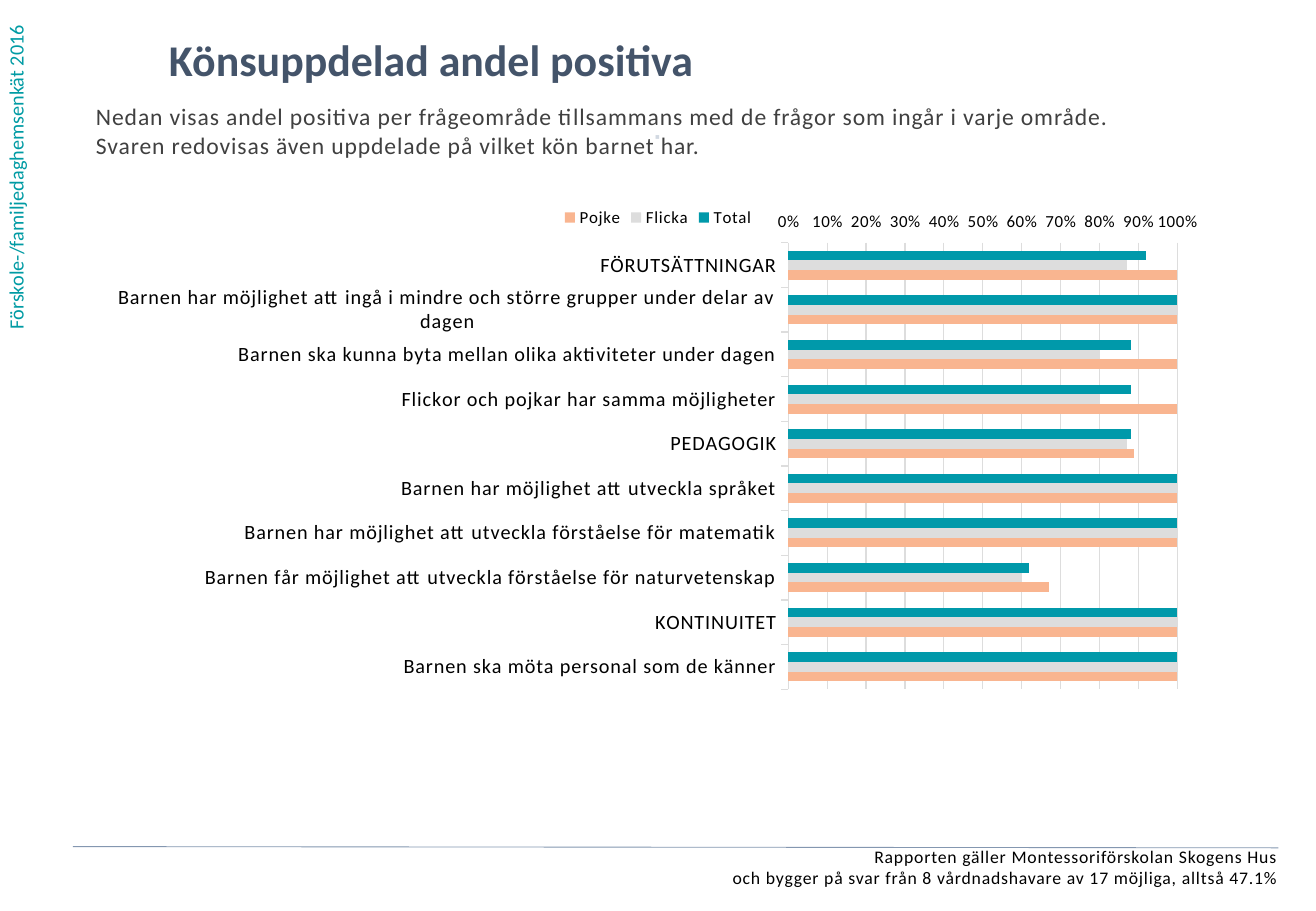
"""Build the slide with share of positive answers by gender."""
from lxml.etree import SubElement
from pptx import Presentation
from pptx.chart.data import CategoryChartData
from pptx.dml.color import RGBColor
from pptx.enum.chart import XL_AXIS_CROSSES, XL_CHART_TYPE, XL_LEGEND_POSITION, XL_TICK_MARK
from pptx.enum.shapes import MSO_CONNECTOR
from pptx.enum.text import PP_ALIGN
from pptx.oxml import parse_xml
from pptx.oxml.ns import nsdecls, qn
from pptx.util import Pt

PX = 9144
FONT = "Calibri"
COLORS = {
    "teal": "009BA4", "title": "44546A", "body": "404040", "black": "000000",
    "dot": "D2D9E2", "rule": "8497B0", "grid": "DDDDDD",
    "Total": "0099AA", "Flicka": "DDDDDD", "Pojke": "F9B590",
}


def style(font, size, color, bold=False):
    font.name, font.size, font.bold = FONT, Pt(size), bold
    font.color.rgb = RGBColor.from_string(COLORS[color])


def add_text(text, at, size, color, bold=False, align=PP_ALIGN.LEFT, spacing=0, inset=0, turn=None):
    box = page.shapes.add_textbox(*[value * PX for value in at])
    frame = box.text_frame
    frame.word_wrap = True
    if turn:
        frame._txBody.bodyPr.set("vert", turn)
    else:
        frame.margin_left = frame.margin_right = frame.margin_top = frame.margin_bottom = inset
    para = frame.paragraphs[0]
    para.alignment = align
    for number, line in enumerate(text.splitlines()):
        if number:
            para.add_line_break()
        span = para.add_run()
        span.text = line
        style(span.font, size, color, bold)
        span._r.get_or_add_rPr().set("spc", str(spacing))


deck = Presentation()
deck.slide_width, deck.slide_height = 1083 * PX, 750 * PX
page = deck.slides.add_slide(deck.slide_layouts[6])

add_text("Förskole-/familjedaghemsenkät 2016", (-2, 0, 40, 281), 12, "teal", turn="vert270")
add_text("Könsuppdelad andel positiva", (139, 27, 834, 57), 26, "title", bold=True)
add_text("""Nedan visas andel positiva per frågeområde tillsammans med de frågor som ingår i varje område.
Svaren redovisas även uppdelade på vilket kön barnet har.""", (79, 84, 946, 101), 14, "body", spacing=50)
add_text("""Rapporten gäller Montessoriförskolan Skogens Hus
och bygger på svar från 8 vårdnadshavare av 17 möjliga, alltså 47.1%""",
         (12, 696, 1040, 43), 10.5, "black", align=PP_ALIGN.RIGHT, spacing=50)
add_text("⋅", (387, 102, 308, 39), 12, "dot", bold=True, align=PP_ALIGN.CENTER, spacing=50)

data = CategoryChartData(number_format="0%")
data.categories = [
    "FÖRUTSÄTTNINGAR",
    "Barnen har möjlighet att ingå i mindre och större grupper under delar av dagen",
    "Barnen ska kunna byta mellan olika aktiviteter under dagen",
    "Flickor och pojkar har samma möjligheter",
    "PEDAGOGIK",
    "Barnen har möjlighet att utveckla språket",
    "Barnen har möjlighet att utveckla förståelse för matematik",
    "Barnen får möjlighet att utveckla förståelse för naturvetenskap",
    "KONTINUITET",
    "Barnen ska möta personal som de känner",
]
data.add_series("Total", (0.92, 1, 0.88, 0.88, 0.88, 1, 1, 0.62, 1, 1))
data.add_series("Flicka", (0.87, 1, 0.8, 0.8, 0.87, 1, 1, 0.6, 1, 1))
data.add_series("Pojke", (1, 1, 1, 1, 0.89, 1, 1, 0.67, 1, 1))
chart = page.shapes.add_chart(
    XL_CHART_TYPE.BAR_CLUSTERED, 79 * PX, 160 * PX, 925 * PX, 443 * PX, data).chart
style(chart.font, 10, "black")
chart.has_title = False
chart.has_legend = True
chart.legend.position = XL_LEGEND_POSITION.TOP
chart.legend.include_in_layout = False
style(chart.legend.font, 10, "black")

plot = chart.plots[0]
plot.gap_width, plot.overlap, plot.vary_by_categories = 162, 0, False
for series in plot.series:
    series.format.fill.solid()
    series.format.fill.fore_color.rgb = RGBColor.from_string(COLORS[series.name])

questions, shares = chart.category_axis, chart.value_axis
questions.reverse_order = True
questions.crosses = XL_AXIS_CROSSES.MAXIMUM
questions.major_tick_mark = XL_TICK_MARK.OUTSIDE
shares.major_tick_mark = XL_TICK_MARK.OUTSIDE
shares.minimum_scale, shares.maximum_scale, shares.major_unit = 0, 1, 0.1
shares.has_major_gridlines = True
shares.format.line.fill.background()
shares.tick_labels.number_format = "0%"
shares.tick_labels.number_format_is_linked = False
for line in (questions.format.line, shares.major_gridlines.format.line):
    line.width = Pt(0.75)
    line.color.rgb = RGBColor.from_string(COLORS["grid"])
style(questions.tick_labels.font, 12, "black")
style(shares.tick_labels.font, 10, "black")
for text_format in chart._chartSpace.iter(qn("a:defRPr")):
    text_format.set("spc", "50")

area = chart._chartSpace.chart.plotArea
for layout in area.findall(qn("c:layout")):
    area.remove(layout)
area.insert(0, parse_xml(
    f'<c:layout {nsdecls("c")}><c:manualLayout><c:layoutTarget val="inner"/>'
    '<c:xMode val="edge"/><c:yMode val="edge"/><c:x val="0.616"/><c:y val="0.09"/>'
    '<c:w val="0.346"/><c:h val="0.83"/></c:manualLayout></c:layout>'))

rule = page.shapes.add_connector(MSO_CONNECTOR.STRAIGHT, 60 * PX, 697 * PX, 1052 * PX, 698 * PX)
rule.line.width = Pt(0.5)
rule.line.color.rgb = RGBColor.from_string(COLORS["rule"])
SubElement(rule._element.spPr, qn("a:effectLst"))

deck.save("out.pptx")
